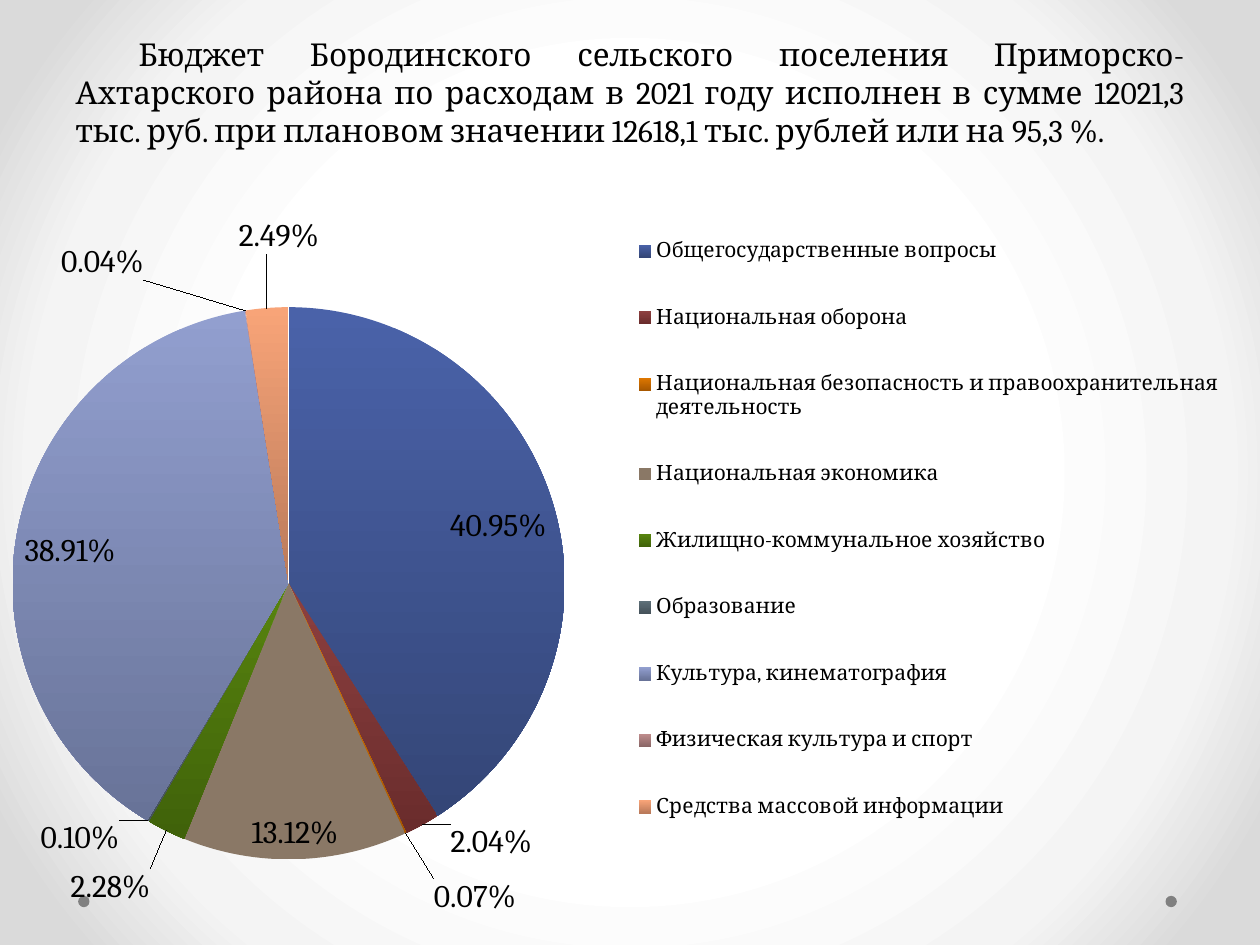
import copy

import pptx
import pptx.chart.data
import pptx.dml.color
import pptx.enum.chart
import pptx.enum.shapes
import pptx.enum.text
import pptx.oxml
import pptx.oxml.ns
import pptx.util

RGBColor = pptx.dml.color.RGBColor
LabelPosition = pptx.enum.chart.XL_LABEL_POSITION
BLACK = RGBColor(0x00, 0x00, 0x00)
GRAY = RGBColor(0x80, 0x80, 0x80)
BLUE, BLUE_DARK = RGBColor(0x4A, 0x62, 0xA9), RGBColor(0x34, 0x46, 0x77)
RED, RED_DARK = RGBColor(0x8D, 0x40, 0x40), RGBColor(0x6A, 0x2C, 0x2C)
ORANGE, ORANGE_DARK = RGBColor(0xE0, 0x78, 0x00), RGBColor(0xA8, 0x58, 0x00)
BROWN = RGBColor(0x8A, 0x78, 0x66)
GREEN, GREEN_DARK = RGBColor(0x57, 0x84, 0x0E), RGBColor(0x40, 0x62, 0x0A)
SLATE, SLATE_DARK = RGBColor(0x5E, 0x70, 0x79), RGBColor(0x45, 0x52, 0x5A)
PERIWINKLE, PERIWINKLE_DARK = RGBColor(0x92, 0x9F, 0xCF), RGBColor(0x68, 0x73, 0x98)
ROSE, ROSE_DARK = RGBColor(0xC0, 0x8E, 0x8E), RGBColor(0x8A, 0x66, 0x66)
PEACH, PEACH_DARK = RGBColor(0xF8, 0xA4, 0x78), RGBColor(0xBA, 0x7A, 0x5A)

BACKGROUND_STOPS = [(50, "FFFFFF"), (76, "F4F4F4"), (92, "DADADA")]
TITLE = (
    "\tБюджет Бородинского сельского поселения Приморско-Ахтарского района "
    "по расходам в 2021 году исполнен в сумме 12021,3 тыс. руб. при плановом "
    "значении 12618,1 тыс. рублей или на 95,3 %."
)
EXPENSES = [
    ("Общегосударственные вопросы", 40.95, (BLUE, BLUE_DARK), None),
    ("Национальная оборона", 2.04, (RED, RED_DARK), (0.02, -0.01)),
    ("Национальная безопасность и правоохранительная деятельность", 0.07,
     (ORANGE, ORANGE_DARK), (0.02, 0.05)),
    ("Национальная экономика", 13.12, (BROWN, BROWN), None),
    ("Жилищно-коммунальное хозяйство", 2.28, (GREEN, GREEN_DARK), (-0.01, 0.04)),
    ("Образование", 0.1, (SLATE, SLATE_DARK), (-0.02, -0.01)),
    ("Культура, кинематография", 38.91, (PERIWINKLE, PERIWINKLE_DARK), None),
    ("Физическая культура и спорт", 0.04, (ROSE, ROSE_DARK), (-0.08, -0.03)),
    ("Средства массовой информации", 2.49, (PEACH, PEACH_DARK), (0.01, -0.06)),
]


class SlideBuilder:
    """Hold the style and current slide, with lengths as shares of its size."""

    body_font = {"name": "Cambria", "size": pptx.util.Pt(18)}
    legend_font = {"name": "Cambria", "size": pptx.util.Pt(12)}

    def __init__(self, presentation):
        """Add a title-only slide."""
        self.presentation = presentation
        self.slide = presentation.slides.add_slide(presentation.slide_layouts[5])

    def box(self, left, top, width, height):
        """Turn shares of the slide into lengths."""
        across, down = self.presentation.slide_width, self.presentation.slide_height
        return [int(left * across), int(top * down), int(width * across), int(height * down)]

    def set_values(self, target, values):
        """Set attributes from a dict."""
        for name, value in values.items():
            setattr(target, name, value)

    def format_font(self, font, values):
        """Apply font values in black."""
        self.set_values(font, values)
        font.color.rgb = BLACK

    def background(self, stops):
        """Fill the background with a circular gradient."""
        self.slide.background.fill.gradient()
        namespace = pptx.oxml.ns.nsdecls("a")
        marks = "".join(
            f'<a:gs pos="{share * 1000}"><a:srgbClr val="{color}"/></a:gs>'
            for share, color in stops
        )
        gradient = pptx.oxml.parse_xml(
            f'<a:gradFill {namespace} rotWithShape="1"><a:gsLst>{marks}</a:gsLst>'
            '<a:path path="circle"><a:fillToRect l="50000" t="50000" r="50000" b="50000"/>'
            '</a:path></a:gradFill>'
        )
        element = next(self.slide.element.iter(pptx.oxml.ns.qn("a:gradFill")))
        element.getparent().replace(element, gradient)

    def dot(self, left, top, width, height):
        """Draw a gray dot."""
        shape = self.slide.shapes.add_shape(
            pptx.enum.shapes.MSO_SHAPE.OVAL, *self.box(left, top, width, height)
        )
        shape.shadow.inherit = False
        shape.fill.solid()
        shape.fill.fore_color.rgb = GRAY
        shape.line.fill.background()

    def title(self, text, *place):
        """Place and format the title."""
        shape = self.slide.shapes.title
        self.set_values(shape, dict(zip(("left", "top", "width", "height"), self.box(*place))))
        frame = shape.text_frame
        self.set_values(frame, {
            "text": text,
            "word_wrap": True,
            "auto_size": pptx.enum.text.MSO_AUTO_SIZE.NONE,
            "vertical_anchor": pptx.enum.text.MSO_ANCHOR.BOTTOM,
        })
        paragraph = frame.paragraphs[0]
        paragraph.alignment = pptx.enum.text.PP_ALIGN.JUSTIFY
        self.format_font(paragraph.runs[0].font, self.body_font)

    def layout(self, left, top, width, height, inner=False):
        """Make a manual layout for a chart part."""
        target = '<c:layoutTarget val="inner"/>' if inner else ""
        return pptx.oxml.parse_xml(
            f'<c:layout {pptx.oxml.ns.nsdecls("c")}><c:manualLayout>{target}'
            '<c:xMode val="edge"/><c:yMode val="edge"/>'
            f'<c:x val="{left}"/><c:y val="{top}"/><c:w val="{width}"/><c:h val="{height}"/>'
            '</c:manualLayout></c:layout>'
        )

    def place_part(self, element, layout):
        """Replace the layout of a plot area or legend."""
        for old in element.findall(pptx.oxml.ns.qn("c:layout")):
            element.remove(old)
        position = element.find(pptx.oxml.ns.qn("c:legendPos"))
        element.insert(0 if position is None else 1, layout)

    def moved_label(self, labels, index, offset):
        """Make a percent label moved out from its slice."""
        label = pptx.oxml.parse_xml(
            f'<c:dLbl {pptx.oxml.ns.nsdecls("c")}><c:idx val="{index}"/>'
            f'<c:layout><c:manualLayout><c:x val="{offset[0]}"/><c:y val="{offset[1]}"/>'
            '</c:manualLayout></c:layout><c:dLblPos val="outEnd"/>'
            '<c:showLegendKey val="0"/><c:showVal val="0"/><c:showCatName val="0"/>'
            '<c:showSerName val="0"/><c:showPercent val="1"/><c:showBubbleSize val="0"/></c:dLbl>'
        )
        for place, tag in enumerate(("c:numFmt", "c:txPr"), start=2):
            label.insert(place, copy.deepcopy(labels.find(pptx.oxml.ns.qn(tag))))
        return label

    def pie(self, expenses, *place):
        """Draw the pie chart of expenses."""
        data = pptx.chart.data.CategoryChartData()
        data.categories = [name for name, *_ in expenses]
        data.add_series("Series 1", [value for _, value, *_ in expenses])
        chart = self.slide.shapes.add_chart(
            pptx.enum.chart.XL_CHART_TYPE.PIE, *self.box(*place), data
        ).chart
        self.set_values(chart, {"has_title": False, "has_legend": True})
        self.format_font(chart.font, self.body_font)
        self.set_values(chart.legend, {
            "position": pptx.enum.chart.XL_LEGEND_POSITION.RIGHT,
            "include_in_layout": False,
        })
        self.format_font(chart.legend.font, self.legend_font)
        plot = chart.plots[0]
        plot.vary_by_categories = True
        plot_area = next(chart.element.iter(pptx.oxml.ns.qn("c:plotArea")))
        legend = next(chart.element.iter(pptx.oxml.ns.qn("c:legend")))
        self.place_part(plot_area, self.layout(0.01, 0.18, 0.44, 0.72, inner=True))
        self.place_part(legend, self.layout(0.5, 0.04, 0.48, 0.86))

        series = plot.series[0]
        labels = series.data_labels
        self.set_values(labels, {
            "show_percentage": True,
            "show_value": False,
            "number_format": "0.00%",
            "number_format_is_linked": False,
            "position": LabelPosition.INSIDE_END,
        })
        self.format_font(labels.font, self.body_font)
        label_list = next(chart.element.iter(pptx.oxml.ns.qn("c:dLbls")))
        moved = []
        for index, (_, _, colors, offset) in enumerate(expenses):
            fill = series.points[index].format.fill
            fill.gradient()
            fill.gradient_angle = 270
            for stop, color in zip(fill.gradient_stops, colors):
                stop.color.rgb = color
            if offset:
                moved.append(self.moved_label(label_list, index, offset))
        for place, label in enumerate(moved):
            label_list.insert(place, label)


def main():
    """Build and save the slide."""
    presentation = pptx.Presentation()
    presentation.slide_width = pptx.util.Inches(10)
    presentation.slide_height = pptx.util.Inches(7.5)
    builder = SlideBuilder(presentation)
    builder.background(BACKGROUND_STOPS)
    for left in (0.925, 0.062):
        builder.dot(left, 0.948, 0.009, 0.012)
    builder.title(TITLE, 0.05, 0, 0.9, 0.164)
    builder.pie(EXPENSES, 0, 0.175, 0.996, 0.819)
    presentation.save("out.pptx")


if __name__ == "__main__":
    main()
